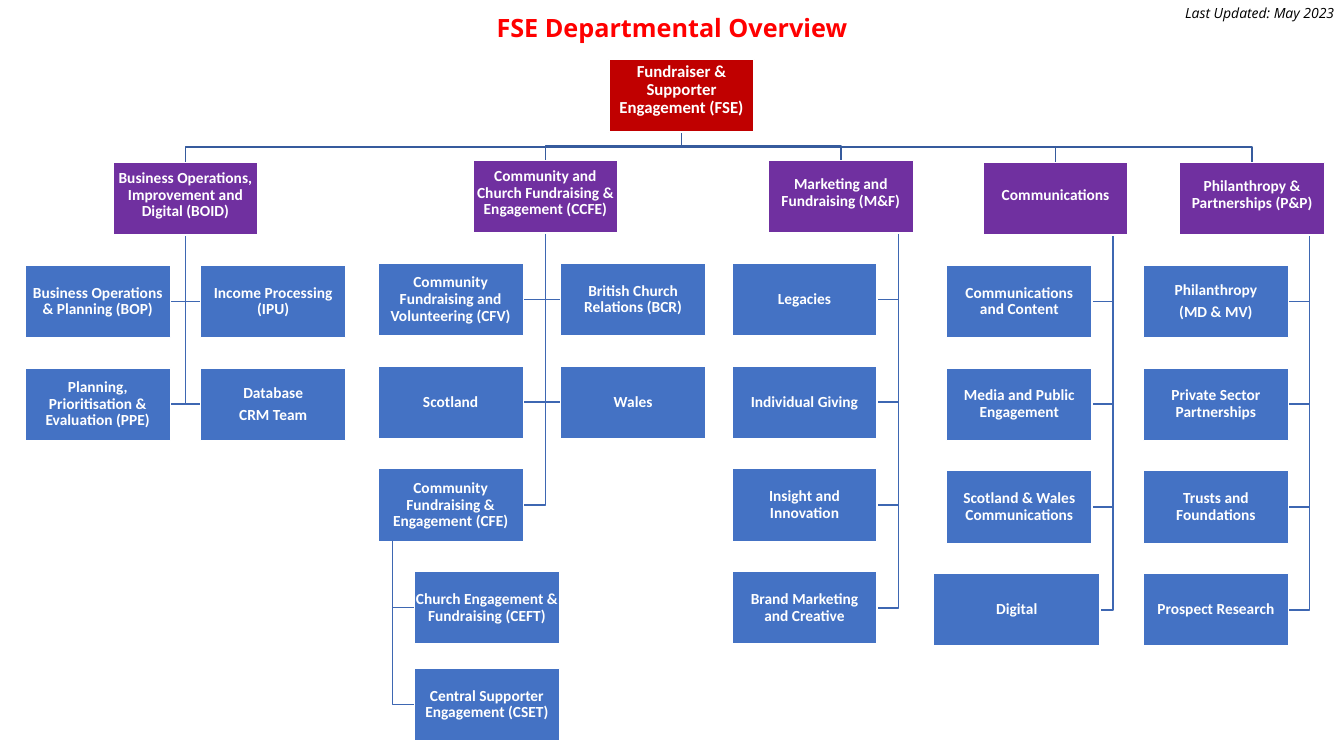
from collections import namedtuple

from pptx import Presentation
from pptx.dml.color import RGBColor
from pptx.enum import shapes, text
from pptx.util import Inches, Pt

COLORS = {
    "title": "FF0000", "date": "000000", "label": "FFFFFF", "border": "FFFFFF",
    "root": "C00000", "department": "7030A0", "team": "4472C4",
    "bus": "365B9D", "branch": "3E67B2",
}
BOX_W, BOX_H = 1.44, 0.72
CENTRE, RIGHT = BOX_W / 2, 1.29     # trunk offset from a department's left side
FIRST_ROW, ROW_PITCH, SUBTEAM_PITCH = 1.02, 1.02, 0.96
ROOT_LEFT, ROOT_TOP = 6.04, 0.59

# dx is measured from the left side of the unit that the team reports to.
Team = namedtuple("Team", "label dx row width subteams", defaults=(BOX_W, ()))
Department = namedtuple("Department", "label left top trunk teams")


def listed(*labels):
    """Teams in one column, left of a trunk on the right."""
    return [Team(label, -0.36, row) for row, label in enumerate(labels)]


DEPARTMENTS = [
    Department("Business Operations, Improvement and Digital (BOID)", 1.12, 1.61, CENTRE, [
        Team("Business Operations & Planning (BOP)", -0.87, 0),
        Team("Income Processing (IPU)", 0.87, 0),
        Team("Planning, Prioritisation & Evaluation (PPE)", -0.87, 1),
        Team("Database\nCRM Team", 0.87, 1),
    ]),
    Department("Community and Church Fundraising & Engagement (CCFE)", 4.69, 1.59, CENTRE, [
        Team("Community Fundraising and Volunteering (CFV)", -0.94, 0),
        Team("British Church Relations (BCR)", 0.87, 0),
        Team("Scotland", -0.94, 1),
        Team("Wales", 0.87, 1),
        Team("Community Fundraising & Engagement (CFE)", -0.94, 2, subteams=(
            Team("Church Engagement & Fundraising (CEFT)", 0.36, 0),
            Team("Central Supporter Engagement (CSET)", 0.36, 1),
        )),
    ]),
    Department("Marketing and Fundraising (M&F)", 7.62, 1.59, RIGHT, listed(
        "Legacies", "Individual Giving", "Insight and Innovation",
        "Brand Marketing\vand Creative")),
    Department("Communications", 9.75, 1.61, RIGHT, listed(
        "Communications\vand Content", "Media and Public Engagement",
        "Scotland & Wales Communications") + [Team("Digital", -0.49, 3, 1.65)]),
    Department("Philanthropy & Partnerships (P&P)", 11.7, 1.61, RIGHT, listed(
        "Philanthropy\n(MD & MV)", "Private Sector Partnerships",
        "Trusts and Foundations", "Prospect Research")),
]


def color(name):
    return RGBColor.from_string(COLORS[name])


def write(frame, words, size=11, font="Calibri", fill="label", bold=False, italic=False,
          align=text.PP_ALIGN.CENTER, anchor=text.MSO_ANCHOR.MIDDLE, line_spacing=0.9):
    frame.word_wrap = True
    frame.vertical_anchor = anchor
    frame.text = words
    for paragraph in frame.paragraphs:
        paragraph.alignment = align
        paragraph.line_spacing = line_spacing
        paragraph.font.size = Pt(size)
        paragraph.font.name = font
        paragraph.font.bold = bold
        paragraph.font.italic = italic
        paragraph.font.color.rgb = color(fill)
    for paragraph in frame.paragraphs[:-1]:
        paragraph.space_after = Pt(4)


def draw_unit(slide, label, left, top, kind, width=BOX_W, size=11, bottom=0.01):
    unit = slide.shapes.add_shape(shapes.MSO_SHAPE.RECTANGLE, Inches(left), Inches(top),
                                  Inches(width), Inches(BOX_H))
    unit.shadow.inherit = False
    unit.fill.solid()
    unit.fill.fore_color.rgb = color(kind)
    unit.line.color.rgb = color("border")
    unit.line.width = Pt(1)
    frame = unit.text_frame
    frame.margin_left = frame.margin_right = frame.margin_top = Inches(0.01)
    frame.margin_bottom = Inches(bottom)
    write(frame, label, size=size, bold=True)


def draw_link(slide, points, kind):
    """Open bent line through points given in inches."""
    start, *rest = [(Inches(x), Inches(y)) for x, y in points]
    builder = slide.shapes.build_freeform(*start)
    builder.add_line_segments(rest, close=False)
    link = builder.convert_to_shape()
    link.shadow.inherit = False
    link.fill.background()
    link.line.color.rgb = color(kind)
    link.line.width = Pt(1)


def draw_branch(slide, left, top, trunk, teams, pitch=ROW_PITCH):
    """Teams below the unit at left, top, joined to its trunk."""
    trunk_x = left + trunk
    for team in teams:
        team_left = left + team.dx
        team_top = top + FIRST_ROW + pitch * team.row
        middle = team_top + BOX_H / 2
        near_side = team_left if team_left > trunk_x else team_left + team.width
        draw_link(slide, [(trunk_x, top + BOX_H), (trunk_x, middle), (near_side, middle)],
                  "branch")
        draw_unit(slide, team.label, team_left, team_top, "team", team.width)
        draw_branch(slide, team_left, team_top, 0.14, team.subteams, SUBTEAM_PITCH)


def draw_chart(slide, left, top):
    """Organisation chart whose root unit stands at left, top."""
    root_x, root_bottom = left + BOX_W / 2, top + BOX_H
    for department in DEPARTMENTS:
        centre = department.left + BOX_W / 2
        bus_y = (root_bottom + department.top) / 2
        draw_link(slide, [(root_x, root_bottom), (root_x, bus_y), (centre, bus_y),
                          (centre, department.top)], "bus")
    draw_unit(slide, "Fundraiser & Supporter Engagement (FSE)", left, top, "root",
              size=12, bottom=0.13)
    for department in DEPARTMENTS:
        draw_branch(slide, department.left, department.top, department.trunk, department.teams)
        draw_unit(slide, department.label, department.left, department.top, "department",
                  bottom=0.08)


def draw_heading(slide, width):
    title = slide.shapes.add_textbox(0, 0, Inches(width), Inches(0.59))
    write(title.text_frame, "FSE Departmental Overview", size=18, font="Open Sans",
          fill="title", bold=True)
    date_width = 2.11
    updated = slide.shapes.add_textbox(Inches(width - date_width), 0,
                                       Inches(date_width), Inches(0.27))
    write(updated.text_frame, "Last Updated: May 2023", size=10, font="Open Sans",
          fill="date", italic=True, align=text.PP_ALIGN.RIGHT,
          anchor=text.MSO_ANCHOR.TOP, line_spacing=1.0)


def main():
    deck = Presentation()
    slide_width = 13.33
    deck.slide_width, deck.slide_height = Inches(slide_width), Inches(7.5)
    slide = deck.slides.add_slide(deck.slide_layouts[6])
    draw_heading(slide, slide_width)
    draw_chart(slide, ROOT_LEFT, ROOT_TOP)
    deck.save("out.pptx")


if __name__ == "__main__":
    main()
